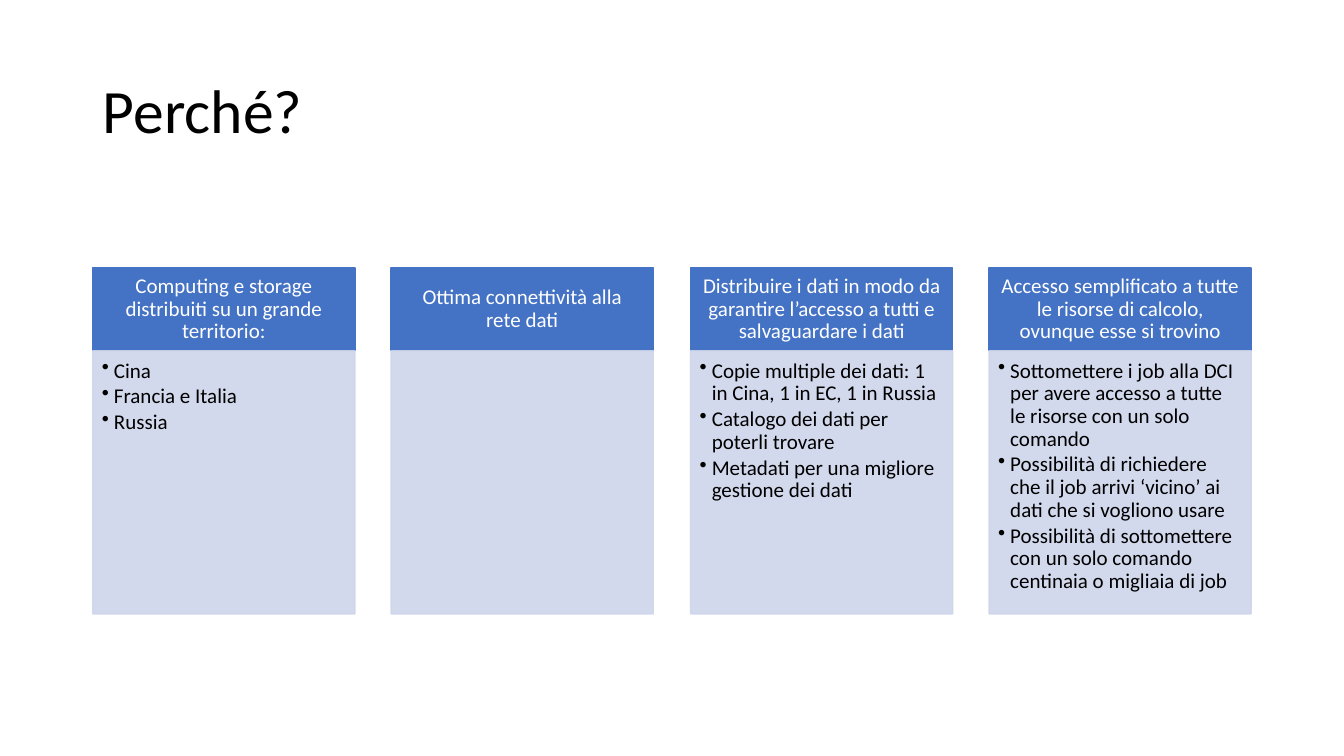
import pptx
import pptx.util
import pptx.dml.color
import pptx.enum.shapes
import pptx.enum.text
import pptx.oxml
import pptx.oxml.ns

RGB = pptx.dml.color.RGBColor
BLUE = RGB(0x44, 0x72, 0xC4)
PALE = RGB(0xCF, 0xD5, 0xEA)
WHITE = RGB(0xFF, 0xFF, 0xFF)
BLACK = RGB(0x00, 0x00, 0x00)
FONT = "Calibri"
SCALE = 9144
LEFT, RIGHT, WIDTH = 92, 1241, 260
HEAD_TOP, HEAD_HIGH = 266, 82
BODY_TOP, BODY_HIGH = 348, 261
ALIGN = pptx.enum.text.PP_ALIGN
ANCHOR = pptx.enum.text.MSO_ANCHOR

CARDS = [
    ("Computing e storage distribuiti su un grande territorio:",
     ["Cina", "Francia e Italia", "Russia"]),
    ("Ottima connettività alla rete dati", []),
    ("Distribuire i dati in modo da garantire l’accesso a tutti e salvaguardare i dati",
     ["Copie multiple dei dati: 1 in Cina, 1 in EC, 1 in Russia",
      "Catalogo dei dati per poterli trovare",
      "Metadati per una migliore gestione dei dati"]),
    ("Accesso semplificato a tutte le risorse di calcolo, ovunque esse si trovino",
     ["Sottomettere i job alla DCI per avere accesso a tutte le risorse con un solo comando",
      "Possibilità di richiedere che il job arrivi ‘vicino’ ai dati che si vogliono usare",
      "Possibilità di sottomettere con un solo comando centinaia o migliaia di job"]),
]


def px(count):
    return pptx.util.Emu(count * SCALE)


def style(para, size, color, align):
    para.alignment = align
    para.line_spacing = 0.9
    para.font.name = FONT
    para.font.size = pptx.util.Pt(size)
    para.font.color.rgb = color


def add_title(slide, text):
    title = slide.shapes.title
    title.left, title.top = px(LEFT), px(40)
    title.width, title.height = px(1150), px(145)
    frame = title.text_frame
    frame.text = text
    frame.vertical_anchor = ANCHOR.MIDDLE
    style(frame.paragraphs[0], 44, BLACK, ALIGN.LEFT)


def add_box(slide, left, top, high, color, insets, anchor):
    kind = pptx.enum.shapes.MSO_SHAPE.RECTANGLE
    box = slide.shapes.add_shape(kind, px(left), px(top), px(WIDTH), px(high))
    box.shadow.inherit = False
    box.fill.solid()
    box.fill.fore_color.rgb = color
    box.line.color.rgb = color
    box.line.width = pptx.util.Pt(1)
    frame = box.text_frame
    frame.word_wrap = True
    frame.vertical_anchor = anchor
    (frame.margin_left, frame.margin_top,
     frame.margin_right, frame.margin_bottom) = map(px, insets)
    return box


def fade(box, percent):
    for tone in box.element.spPr.iter(pptx.oxml.ns.qn("a:srgbClr")):
        alpha = pptx.oxml.parse_xml(
            f'<a:alpha {pptx.oxml.ns.nsdecls("a")} val="{percent * 1000}"/>')
        tone.append(alpha)


def add_head(slide, left, text):
    box = add_box(slide, left, HEAD_TOP, HEAD_HIGH, BLUE,
                  (12, 7, 12, 7), ANCHOR.MIDDLE)
    box.text_frame.text = text
    style(box.text_frame.paragraphs[0], 15, WHITE, ALIGN.CENTER)


def add_bullet(para):
    props = para._p.get_or_add_pPr()
    props.set("marL", str(px(12)))
    props.set("indent", str(px(-12)))
    props.append(pptx.oxml.parse_xml(
        f'<a:buChar {pptx.oxml.ns.nsdecls("a")} char="•"/>'))


def add_body(slide, left, items):
    box = add_box(slide, left, BODY_TOP, BODY_HIGH, PALE,
                  (9, 9, 12, 13), ANCHOR.TOP)
    fade(box, 90)
    if not items:
        return
    frame = box.text_frame
    frame.text = "\n".join(items)
    for para in frame.paragraphs:
        para.level = 1
        add_bullet(para)
        style(para, 15, BLACK, ALIGN.LEFT)
        para.space_after = pptx.util.Pt(2.25)


def main():
    deck = pptx.Presentation()
    deck.slide_width, deck.slide_height = px(1333), px(750)
    slide = deck.slides.add_slide(deck.slide_layouts[5])
    add_title(slide, "Perché?")
    pitch = (RIGHT - WIDTH - LEFT) / (len(CARDS) - 1)
    for index, (head, items) in enumerate(CARDS):
        left = round(LEFT + index * pitch)
        add_head(slide, left, head)
        add_body(slide, left, items)
    deck.save("out.pptx")


if __name__ == "__main__":
    main()
